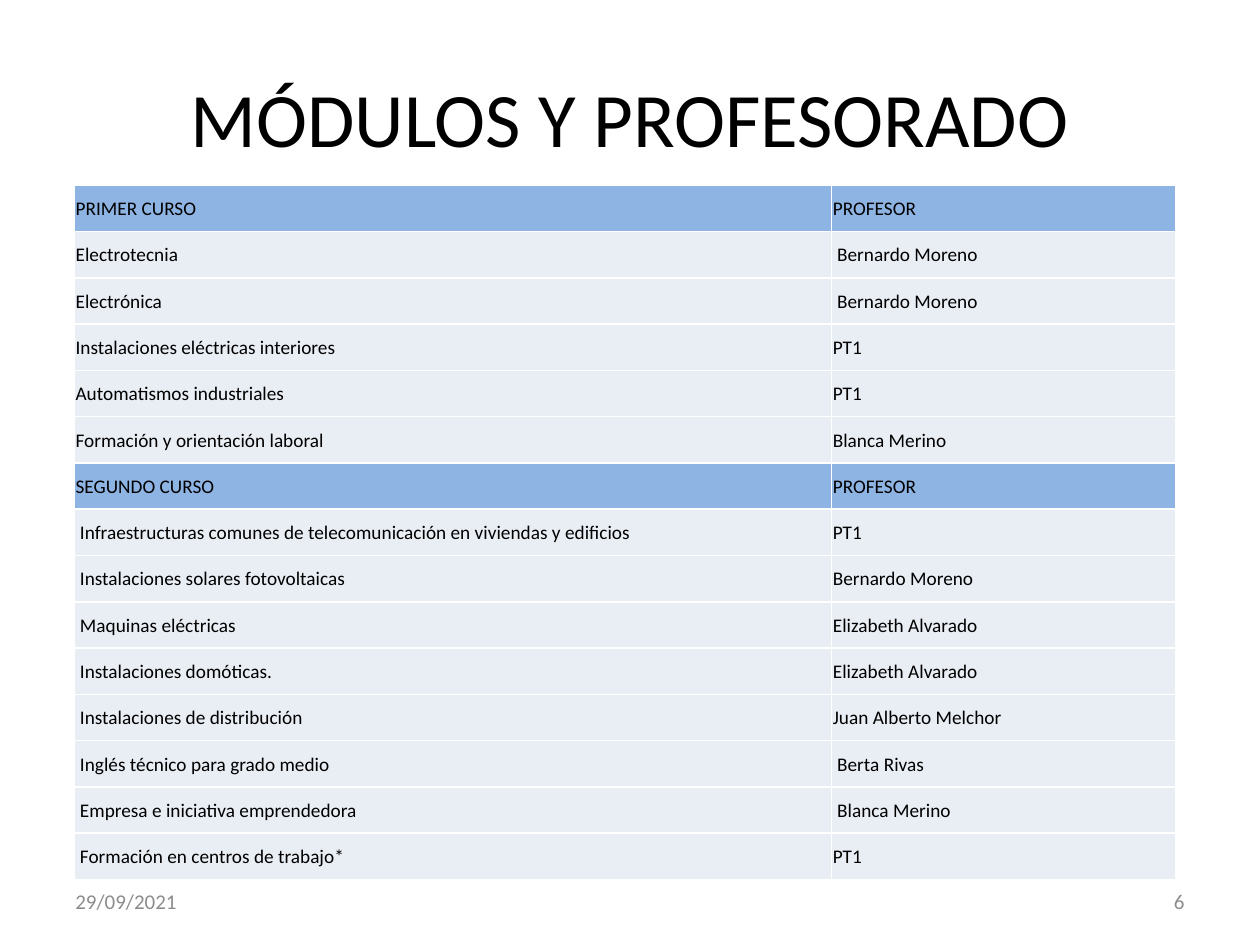
from typing import NamedTuple

from lxml.etree import SubElement
from pptx import Presentation
from pptx.dml.color import RGBColor
from pptx.enum.text import MSO_ANCHOR, PP_ALIGN
from pptx.oxml.ns import qn
from pptx.util import Inches, Pt


class Label(NamedTuple):
    text: str
    left: float
    top: float
    width: float
    height: float
    size: int
    ink: str
    align: PP_ALIGN


class Row(NamedTuple):
    module: str
    teacher: str
    head: bool = False


LABELS = [
    Label("MÓDULOS Y PROFESORADO", 0.5, 0.3, 9, 1.25, 44, "000000", PP_ALIGN.CENTER),
    Label("29/09/2021", 0.5, 6.95, 2.33, 0.4, 12, "8C8C8C", PP_ALIGN.LEFT),
    Label("6", 7.17, 6.95, 2.33, 0.4, 12, "8C8C8C", PP_ALIGN.RIGHT),
]

ROWS = [
    Row("PRIMER CURSO", "PROFESOR", True),
    Row("Electrotecnia", " Bernardo Moreno"),
    Row("Electrónica", " Bernardo Moreno"),
    Row("Instalaciones eléctricas interiores", "PT1"),
    Row("Automatismos industriales", "PT1"),
    Row("Formación y orientación laboral", "Blanca Merino"),
    Row("SEGUNDO CURSO ", "PROFESOR", True),
    Row(" Infraestructuras comunes de telecomunicación en viviendas y edificios", "PT1"),
    Row(" Instalaciones solares fotovoltaicas", "Bernardo Moreno"),
    Row(" Maquinas eléctricas", "Elizabeth Alvarado"),
    Row(" Instalaciones domóticas.", "Elizabeth Alvarado"),
    Row(" Instalaciones de distribución", "Juan Alberto Melchor"),
    Row(" Inglés técnico para grado medio", " Berta Rivas"),
    Row(" Empresa e iniciativa emprendedora", " Blanca Merino"),
    Row(" Formación en centros de trabajo*", "PT1"),
]
WIDTHS = [6.01, 2.73]
HEIGHT = 5.51


def color(code: str) -> RGBColor:
    return RGBColor.from_string(code)


def add_run(frame, text: str, size: int, ink: str, align=PP_ALIGN.LEFT) -> None:
    par = frame.paragraphs[0]
    par.alignment = align
    run = par.add_run()
    run.text = text
    font = run.font
    font.name, font.size, font.bold = "Calibri", Pt(size), False
    font.color.rgb = color(ink)


def add_label(slide, label: Label) -> None:
    place = (label.left, label.top, label.width, label.height)
    frame = slide.shapes.add_textbox(*map(Inches, place)).text_frame
    frame.word_wrap = True
    frame.vertical_anchor = MSO_ANCHOR.MIDDLE
    add_run(frame, label.text, label.size, label.ink, label.align)


def add_edges(cell) -> None:
    """Draw a thin white line on all four sides; call before the fill is set."""
    props = cell._tc.get_or_add_tcPr()
    for side in ("a:lnL", "a:lnR", "a:lnT", "a:lnB"):
        line = SubElement(props, qn(side), w=str(Pt(1)))
        fill = SubElement(line, qn("a:solidFill"))
        SubElement(fill, qn("a:srgbClr"), val="FFFFFF")


def fill_cell(cell, text: str, back: str) -> None:
    add_edges(cell)
    cell.fill.solid()
    cell.fill.fore_color.rgb = color(back)
    cell.vertical_anchor = MSO_ANCHOR.MIDDLE
    cell.margin_left = cell.margin_right = cell.margin_top = Inches(0.01)
    cell.margin_bottom = 0
    add_run(cell.text_frame, text, 11, "000000")


def add_grid(slide, rows: list[Row]) -> None:
    place = map(Inches, (0.59, 1.47, sum(WIDTHS), HEIGHT))
    table = slide.shapes.add_table(len(rows), len(WIDTHS), *place).table
    table.first_row = table.horz_banding = False
    for col, width in zip(table.columns, WIDTHS):
        col.width = Inches(width)
    for line, row in zip(table.rows, rows):
        line.height = Inches(HEIGHT / len(rows))
        back = "8EB4E3" if row.head else "E9EDF4"
        for cell, text in zip(line.cells, (row.module, row.teacher)):
            fill_cell(cell, text, back)


def main() -> None:
    deck = Presentation()
    deck.slide_width, deck.slide_height = Inches(10), Inches(7.5)
    slide = deck.slides.add_slide(deck.slide_layouts[6])
    add_grid(slide, ROWS)
    for label in LABELS:
        add_label(slide, label)
    deck.save("out.pptx")


if __name__ == "__main__":
    main()
